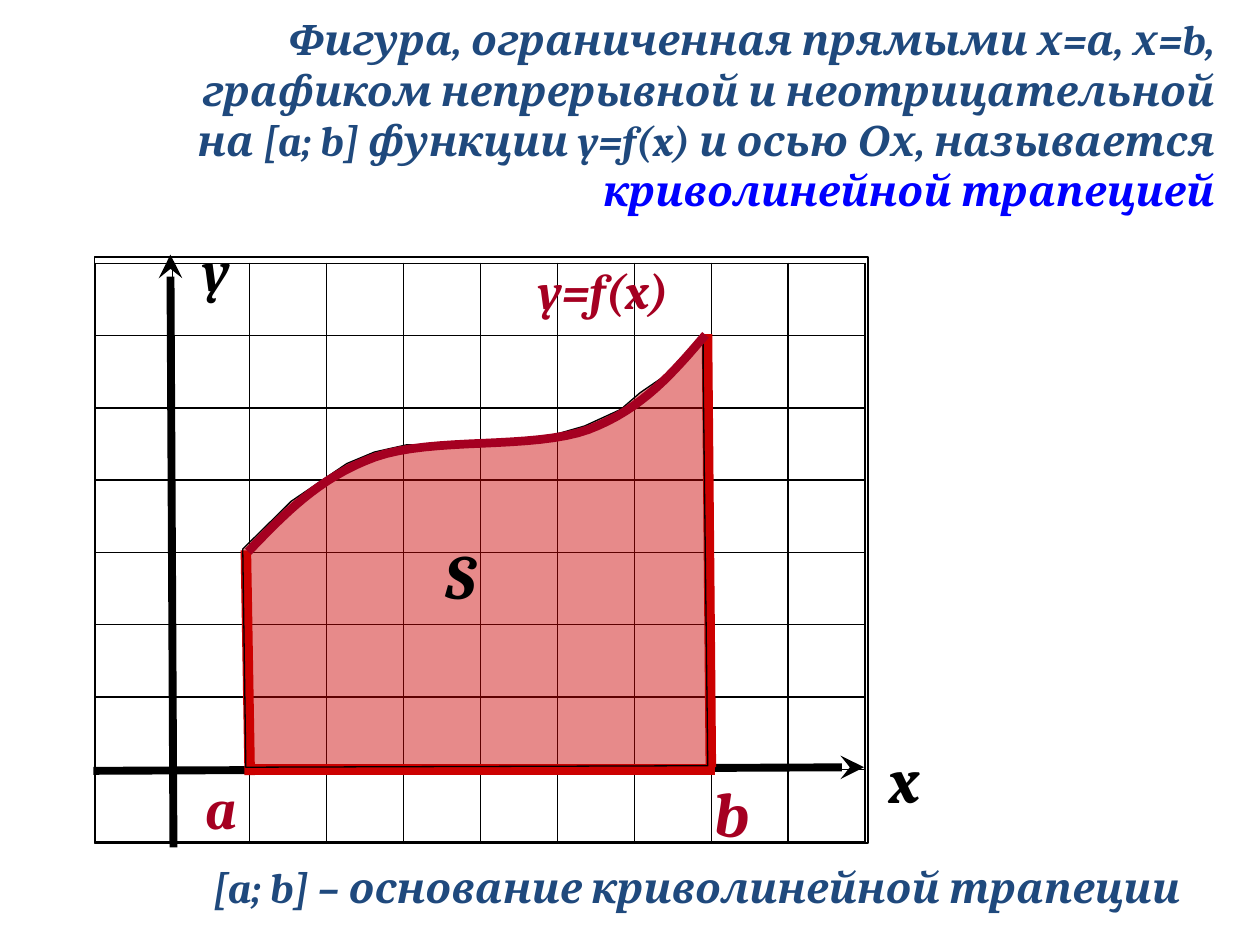
import pptx
import pptx.dml.color
import pptx.enum.shapes
import pptx.enum.text
import pptx.oxml
import pptx.oxml.ns
import pptx.util

NS = pptx.oxml.ns.nsdecls("a")
BLACK, RED, CRIMSON, NAVY, BLUE = "000000", "CC0000", "A50021", "1F497D", "0000FF"
LEFT, TOP, WIDTH, HEIGHT = 0.76, 2.09, 6.11, 4.59
COLS, ROWS = 10, 8


def rgb(value):
    return pptx.dml.color.RGBColor.from_string(value)


def grid(col, row):
    """Slide position of a point given in columns and rows of the grid."""
    return (pptx.util.Inches(LEFT + col * WIDTH / COLS),
            pptx.util.Inches(TOP + row * HEIGHT / ROWS))


prs = pptx.Presentation()
prs.slide_width, prs.slide_height = pptx.util.Inches(10), pptx.util.Inches(7.5)
s = prs.slides.add_slide(prs.slide_layouts[6])

# Sheet and its grid
sheet = s.shapes.add_shape(pptx.enum.shapes.MSO_SHAPE.RECTANGLE,
                           *[pptx.util.Inches(v) for v in (0.75, 2.04, 6.14, 4.65)])
sheet.shadow.inherit = False
sheet.fill.solid()
sheet.fill.fore_color.rgb = rgb("FFFFFF")
sheet.line.color.rgb = rgb(BLACK)
sheet.line.width = pptx.util.Pt(0.75)

table = s.shapes.add_table(ROWS, COLS, *grid(0, 0), pptx.util.Inches(WIDTH),
                           pptx.util.Inches(HEIGHT)).table
table.first_row = table.horz_banding = False
for cell in table.iter_cells():
    tcPr = cell._tc.get_or_add_tcPr()
    for side in ("lnL", "lnR", "lnT", "lnB"):
        tcPr.append(pptx.oxml.parse_xml(
            f'<a:{side} {NS} w="12700"><a:solidFill><a:srgbClr val="{BLACK}"/>'
            f'</a:solidFill></a:{side}>'))
    cell.fill.background()

# Axes, then the straight sides of the trapezoid
for start, end, colour, width, arrow in [
    ((1.01, 8.08), (0.97, -0.12), BLACK, 4.5, True),
    ((-0.03, 7.02), (9.98, 6.97), BLACK, 4.5, True),
    ((1.95, 3.97), (2, 7.08), RED, 6, False),
    ((7.94, 0.98), (7.99, 6.97), RED, 6, False),
    ((2.05, 7), (8.04, 7), RED, 6, False),
]:
    line = s.shapes.add_connector(pptx.enum.shapes.MSO_CONNECTOR.STRAIGHT,
                                  *grid(*start), *grid(*end))
    line.line.color.rgb = rgb(colour)
    line.line.width = pptx.util.Pt(width)
    if arrow:
        line.line._get_or_add_ln().append(
            pptx.oxml.parse_xml(f'<a:tailEnd {NS} type="stealth"/>'))
    line._element.spPr.append(pptx.oxml.parse_xml(f'<a:effectLst {NS}/>'))

# Shaded area
area = [(1.95, 6.97), (1.91, 3.95), (2.16, 3.69), (2.54, 3.29), (2.9, 3.03),
        (3.26, 2.77), (3.62, 2.61), (4.04, 2.51), (4.47, 2.51), (5.01, 2.46),
        (5.47, 2.46), (5.86, 2.4), (6.35, 2.25), (6.82, 2.02), (7.07, 1.79),
        (7.4, 1.55), (7.66, 1.24), (7.89, 0.98), (7.89, 1.43), (7.95, 6.95)]

# Graph of the function: three Bezier arcs sharing their end points
knots = [(1.98, 3.99), (2.44, 3.48), (2.9, 2.96), (3.63, 2.68), (4.37, 2.4),
         (5.68, 2.58), (6.4, 2.3), (7.1, 2.02), (7.51, 1.5), (7.92, 0.99)]
STEPS = 16
curve = [knots[0]]
for i in range(0, len(knots) - 1, 3):
    for step in range(1, STEPS + 1):
        t = step / STEPS
        weights = ((1 - t) ** 3, 3 * t * (1 - t) ** 2, 3 * t * t * (1 - t), t ** 3)
        curve.append(tuple(sum(w * k[axis] for w, k in zip(weights, knots[i:i + 4]))
                           for axis in (0, 1)))

for points, closed, colour, width in [(area, True, BLACK, 0.75),
                                      (curve, False, CRIMSON, 5)]:
    builder = s.shapes.build_freeform(*grid(*points[0]))
    builder.add_line_segments([grid(*p) for p in points[1:]], close=closed)
    sp = builder.convert_to_shape()
    sp.shadow.inherit = False
    sp.line.color.rgb = rgb(colour)
    sp.line.width = pptx.util.Pt(width)
    if closed:
        sp.fill.solid()
        sp.fill.fore_color.rgb = rgb(RED)
        sp.fill._xPr.find(".//" + pptx.oxml.ns.qn("a:srgbClr")).append(
            pptx.oxml.parse_xml(f'<a:alpha {NS} val="46000"/>'))
    else:
        sp.fill.background()

# Definition, labels and caption
definition = ("Фигура, ограниченная прямыми х=а, х=b, графиком непрерывной и "
              "неотрицательной на [a; b] функции y=f(x) и осью Ох, называется ")
for box, runs, size, right, wrap in [
    ((1.3, 0.06, 8.44, 2.1),
     [(definition, NAVY), ("криволинейной трапецией", BLUE)], 24, True, True),
    ((6.96, 5.83, 0.95, 0.7), [("x", BLACK)], 36, False, True),
    ((1.51, 1.82, 0.71, 0.63), [("y", BLACK)], 32, False, True),
    ((4.17, 2.02, 1.58, 0.57), [("y=f(x)", CRIMSON)], 28, False, True),
    ((1.53, 6.09, 0.71, 0.63), [("a", CRIMSON)], 32, False, True),
    ((5.57, 6.1, 0.71, 0.7), [("b", CRIMSON)], 36, False, True),
    ((3.44, 4.21, 1, 0.7), [("S", BLACK)], 36, False, True),
    ((1.14, 6.79, 8.33, 0.5),
     [("[a; b] – основание криволинейной трапеции", NAVY)], 24, True, False),
]:
    tf = s.shapes.add_textbox(*[pptx.util.Inches(v) for v in box]).text_frame
    tf.word_wrap = wrap
    p = tf.paragraphs[0]
    if right:
        p.alignment = pptx.enum.text.PP_ALIGN.RIGHT
    for text, colour in runs:
        r = p.add_run()
        r.text = text
        r.font.name = "Cambria"
        r.font.size = pptx.util.Pt(size)
        r.font.bold = r.font.italic = True
        r.font.color.rgb = rgb(colour)

prs.save("out.pptx")
